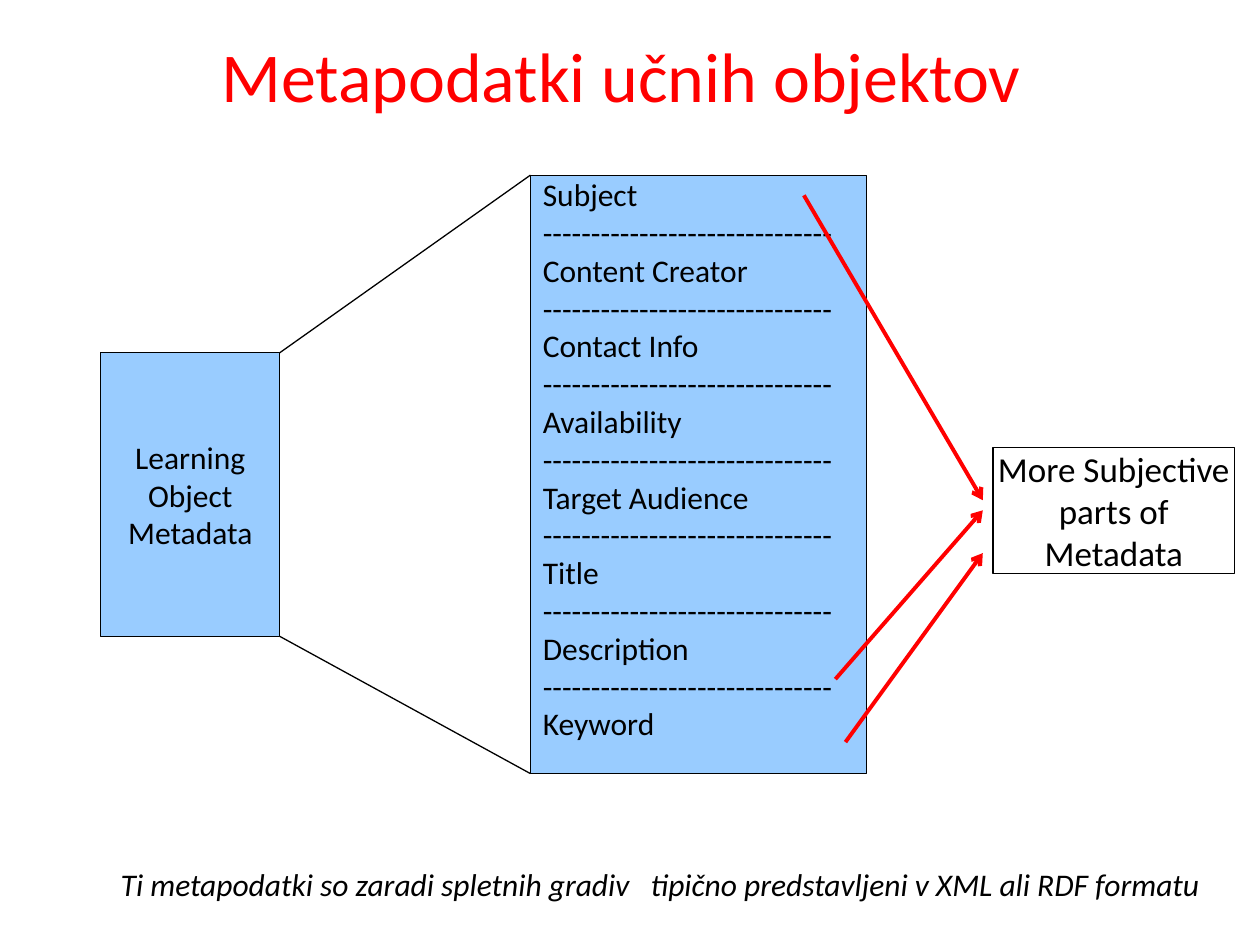
from pptx import Presentation
from pptx.dml.color import RGBColor
from pptx.enum.shapes import MSO_CONNECTOR as Connector, MSO_SHAPE as Shape
from pptx.enum.text import MSO_ANCHOR as Anchor, PP_ALIGN as Align
from pptx.oxml.ns import qn
from pptx.util import Inches, Pt
from lxml.etree import SubElement

RED = RGBColor(0xFF, 0x00, 0x00)
BLACK = RGBColor(0x00, 0x00, 0x00)
LIGHT_BLUE = RGBColor(0x99, 0xCC, 0xFF)
FONT = "Calibri"

FIELDS = ["Subject", "Content Creator", "Contact Info", "Availability",
          "Target Audience", "Title", "Description", "Keyword"]
SEPARATOR = "-" * 30

# Boxes: left, top, width, height
TITLE_BOX = (0.43, -0.03, 9, 1.25)
OBJECT_BOX = (0.8, 2.8, 1.42, 2.25)
FIELDS_BOX = (4.21, 1.39, 2.67, 4.75)
SUBJECTIVE_BOX = (7.88, 3.55, 1.92, 1)
NOTE_BOX = (0.86, 6.82, 8.94, 0.4)


def write_text(shape, lines, size=18, color=BLACK, align=Align.LEFT,
               anchor=Anchor.MIDDLE, italic=False, wrap=True):
    frame = shape.text_frame
    frame.word_wrap = wrap
    frame.vertical_anchor = anchor
    frame.text = "\n".join(lines)
    for paragraph in frame.paragraphs:
        paragraph.alignment = align
        font = paragraph.font
        font.name, font.size, font.italic = FONT, Pt(size), italic
        font.color.rgb = color


def add_text(slide, box, text, **text_format):
    shape = slide.shapes.add_textbox(*map(Inches, box))
    write_text(shape, [text], **text_format)


def add_box(slide, box, lines, fill=None, **text_format):
    shape = slide.shapes.add_shape(Shape.RECTANGLE, *map(Inches, box))
    shape.shadow.inherit = False
    if fill is None:
        shape.fill.background()
    else:
        shape.fill.solid()
        shape.fill.fore_color.rgb = fill
    shape.line.color.rgb = BLACK
    shape.line.width = Pt(0.75)
    write_text(shape, lines, **text_format)
    return shape


def add_line(slide, start, end, color=BLACK, width=0.75, arrow=False):
    line = slide.shapes.add_connector(Connector.STRAIGHT, *map(Inches, start + end))
    line.line.color.rgb = color
    line.line.width = Pt(width)
    if arrow:
        SubElement(line.line._get_or_add_ln(), qn("a:tailEnd"), type="arrow")
    SubElement(line._element.spPr, qn("a:effectLst"))


def add_fields(slide, box):
    # One field per line, with a dashed line between neighbours
    lines = f"\n{SEPARATOR}\n".join(FIELDS).split("\n")
    shape = add_box(slide, box, lines, fill=LIGHT_BLUE, anchor=Anchor.TOP)
    shape.text_frame.margin_top = 0


def add_zoom_lines(slide, small, large):
    # Join the right corners of the small box to the left corners of the large one
    right, left = small[0] + small[2], large[0]
    add_line(slide, (right, small[1]), (left, large[1]))
    add_line(slide, (right, small[1] + small[3]), (left, large[1] + large[3]))


def add_subjective_arrows(slide, box):
    tip = box[0] - 0.08
    for start, tip_offset in [((6.38, 1.55), 0.42),
                              ((6.63, 5.39), 0.5),
                              ((6.71, 5.89), 0.84)]:
        add_line(slide, start, (tip, box[1] + tip_offset),
                 color=RED, width=2.25, arrow=True)


def build_metadata_slide(presentation):
    slide = presentation.slides.add_slide(presentation.slide_layouts[6])
    # Title
    add_text(slide, TITLE_BOX, "Metapodatki učnih objektov",
             size=40, color=RED, align=Align.CENTER)
    # Learning object and its metadata fields
    add_box(slide, OBJECT_BOX, ["Learning", "Object", "Metadata"],
            fill=LIGHT_BLUE, align=Align.CENTER, wrap=False)
    add_fields(slide, FIELDS_BOX)
    add_zoom_lines(slide, OBJECT_BOX, FIELDS_BOX)
    # Subjective fields
    add_subjective_arrows(slide, SUBJECTIVE_BOX)
    add_box(slide, SUBJECTIVE_BOX, ["More Subjective", "parts of", "Metadata"],
            size=20, align=Align.CENTER, wrap=False)
    # Closing note
    add_text(slide, NOTE_BOX,
             "Ti metapodatki so zaradi spletnih gradiv   tipično predstavljeni v XML ali RDF formatu",
             italic=True, anchor=Anchor.TOP)


def main():
    presentation = Presentation()
    presentation.slide_width = Inches(10)
    presentation.slide_height = Inches(7.5)
    build_metadata_slide(presentation)
    presentation.save("out.pptx")


if __name__ == "__main__":
    main()
